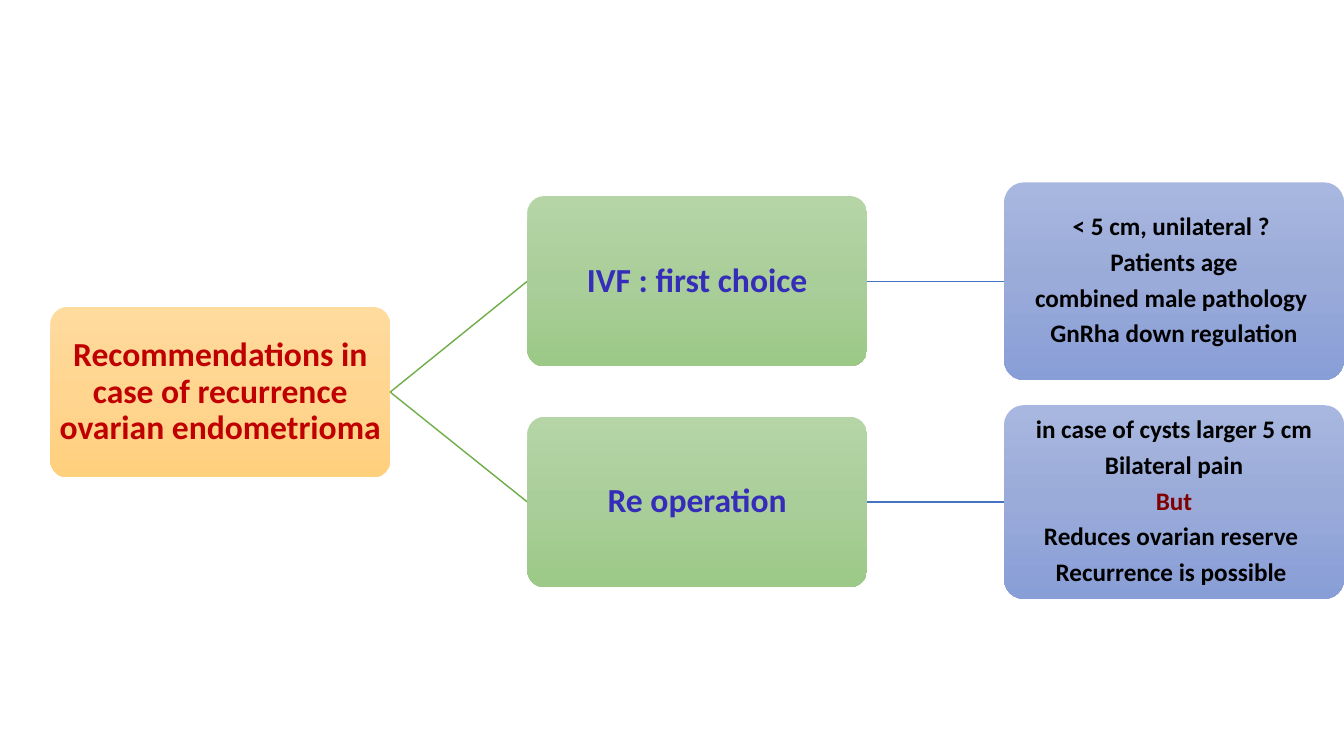
from copy import deepcopy
from dataclasses import dataclass

from pptx import Presentation
from pptx.dml.color import RGBColor
from pptx.enum.shapes import MSO_CONNECTOR, MSO_SHAPE
from pptx.enum.text import MSO_ANCHOR, PP_ALIGN
from pptx.oxml.ns import qn
from pptx.oxml.xmlchemy import OxmlElement
from pptx.slide import Slide
from pptx.util import Inches, Pt

ROUNDED = MSO_SHAPE.ROUNDED_RECTANGLE
STRAIGHT = MSO_CONNECTOR.STRAIGHT
MIDDLE = MSO_ANCHOR.MIDDLE
CENTER = PP_ALIGN.CENTER

LEFT_EDGE = 0.5
BOX_WIDTH = 3.37
COLUMN_STEP = BOX_WIDTH + 1.36
ROOT_Y, IVF_Y, REOPERATION_Y = 3.89, 2.79, 4.98

ORANGE = ("FFDB9E", "FFD590", "FFD07C")
GREEN = ("B5D5A7", "AACE9A", "9CC987")
BLUE = ("A8B7DF", "9AABD9", "889ED7")
RED, INDIGO, BLACK, MAROON = "C00000", "352DB9", "000000", "800000"
BRANCH_GREEN, DETAIL_BLUE = "70AD47", "4472C4"


@dataclass(frozen=True)
class Line:
    text: str
    color: str


@dataclass(frozen=True)
class Box:
    column: int
    center_y: float
    height: float
    gradient: tuple[str, str, str]
    size: int
    space_after: float
    inset: float
    lines: tuple[Line, ...]

    @property
    def left(self) -> float:
        return LEFT_EDGE + self.column * COLUMN_STEP

    @property
    def right(self) -> float:
        return self.left + BOX_WIDTH


@dataclass(frozen=True)
class Link:
    start: Box
    end: Box
    color: str


def rgb(color: str) -> RGBColor:
    return RGBColor.from_string(color)


def heading(column: int, center_y: float, gradient: tuple[str, str, str],
            text: str, color: str) -> Box:
    return Box(column, center_y, 1.69, gradient, 24, 8, 0.02, (Line(text, color),))


def details(center_y: float, height: float, *lines: Line) -> Box:
    return Box(2, center_y, height, BLUE, 18, 6, 0.01, lines)


def draw_box(slide: Slide, box: Box) -> None:
    shape = slide.shapes.add_shape(
        ROUNDED, Inches(box.left), Inches(box.center_y - box.height / 2),
        Inches(BOX_WIDTH), Inches(box.height))
    shape.adjustments[0] = 0.1
    shape.shadow.inherit = False
    shape.line.fill.background()

    shape.fill.gradient()
    shape.fill.gradient_angle = 270
    stop_list = shape.element.spPr.find(qn("a:gradFill")).find(qn("a:gsLst"))
    stop_list.insert(1, deepcopy(stop_list[0]))
    for index, (stop, color) in enumerate(zip(shape.fill.gradient_stops, box.gradient)):
        stop.position = index / 2
        stop.color.rgb = rgb(color)

    frame = shape.text_frame
    inset = Inches(box.inset)
    frame_format = {"word_wrap": True, "vertical_anchor": MIDDLE,
                    "margin_left": inset, "margin_right": inset,
                    "margin_top": inset, "margin_bottom": inset}
    for name, value in frame_format.items():
        setattr(frame, name, value)

    paragraph_format = {"alignment": CENTER, "line_spacing": 0.9,
                        "space_after": Pt(box.space_after)}
    font_format = {"name": "Calibri", "size": Pt(box.size), "bold": True}
    for index, line in enumerate(box.lines):
        paragraph = frame.add_paragraph() if index else frame.paragraphs[0]
        for name, value in paragraph_format.items():
            setattr(paragraph, name, value)
        run = paragraph.add_run()
        run.text = line.text
        for name, value in font_format.items():
            setattr(run.font, name, value)
        run.font.color.rgb = rgb(line.color)


def draw_link(slide: Slide, link: Link) -> None:
    connector = slide.shapes.add_connector(
        STRAIGHT, Inches(link.start.right), Inches(link.start.center_y),
        Inches(link.end.left), Inches(link.end.center_y))
    connector.line.color.rgb = rgb(link.color)
    connector.line.width = Pt(1)
    connector.element.spPr.append(OxmlElement("a:effectLst"))


def main() -> None:
    recommendations = heading(
        0, ROOT_Y, ORANGE,
        "Recommendations in case of recurrence ovarian endometrioma ", RED)
    ivf = heading(1, IVF_Y, GREEN, "IVF : first choice", INDIGO)
    reoperation = heading(1, REOPERATION_Y, GREEN, "Re operation", INDIGO)
    ivf_details = details(
        IVF_Y, 1.96,
        Line("< 5 cm, unilateral ? ", BLACK),
        Line("Patients age", BLACK),
        Line("combined male pathology ", BLACK),
        Line("GnRha down regulation", BLACK))
    reoperation_details = details(
        REOPERATION_Y, 1.92,
        Line("in case of cysts larger 5 cm", BLACK),
        Line("Bilateral pain", BLACK),
        Line("But", MAROON),
        Line("Reduces ovarian reserve ", BLACK),
        Line("Recurrence is possible ", BLACK))
    links = (
        Link(recommendations, ivf, BRANCH_GREEN),
        Link(ivf, ivf_details, DETAIL_BLUE),
        Link(recommendations, reoperation, BRANCH_GREEN),
        Link(reoperation, reoperation_details, DETAIL_BLUE),
    )

    presentation = Presentation()
    presentation.slide_width = Inches(13.33)
    presentation.slide_height = Inches(7.5)
    slide = presentation.slides.add_slide(presentation.slide_layouts[6])
    draw_box(slide, recommendations)
    for link in links:
        draw_link(slide, link)
        draw_box(slide, link.end)
    presentation.save("out.pptx")


if __name__ == "__main__":
    main()
